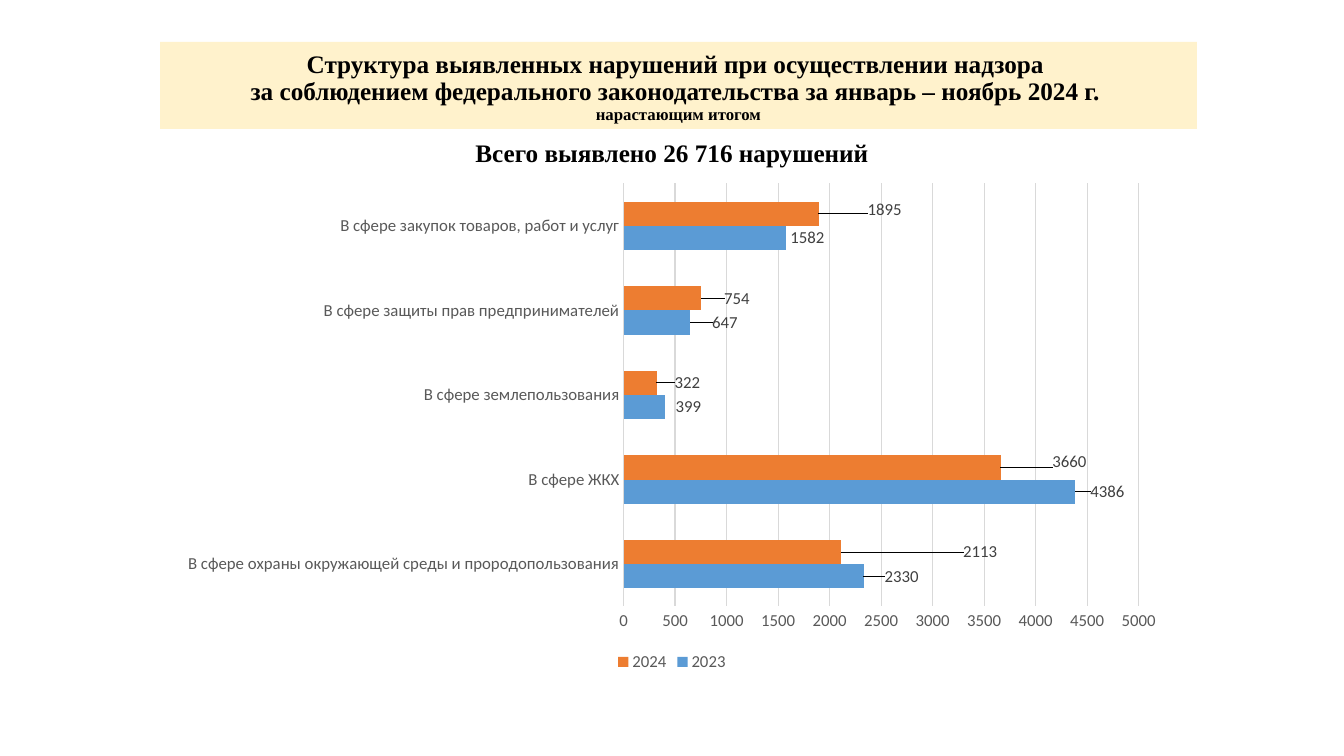
from copy import deepcopy

from lxml.etree import SubElement
from pptx import Presentation
from pptx.chart.data import CategoryChartData
from pptx.dml.color import RGBColor
from pptx.enum.chart import (XL_CHART_TYPE, XL_LABEL_POSITION, XL_LEGEND_POSITION,
                             XL_TICK_MARK)
from pptx.enum.text import MSO_ANCHOR, PP_ALIGN
from pptx.oxml.ns import qn
from pptx.util import Emu, Pt

HEADING = {"name": "Times New Roman", "bold": True}
TITLE = [("Структура выявленных нарушений при осуществлении надзора ", 18),
         ("за соблюдением федерального законодательства за январь – ноябрь 2024 г. ", 18),
         ("нарастающим итогом", 12)]
CATEGORIES = ["В сфере охраны окружающей среды и прородопользования", "В сфере ЖКХ",
              "В сфере землепользования", "В сфере защиты прав предпринимателей",
              "В сфере закупок товаров, работ и услуг"]
SERIES = [("2023", "5B9BD5", [2330, 4386, 399, 647, 1582],
           [(17, 0), (11, 0), (7, 0), (18, 0), (0, 0)]),
          ("2024", "ED7D31", [2113, 3660, 322, 754, 1895],
           [(118, 0), (48, -6), (14, 0), (19, 0), (45, -4)])]


def px(n):
    """Turn whole px into EMU."""
    return Emu(round(n * 12192000 / 1344))


def rgb(value):
    """Turn a hex string into a colour."""
    return RGBColor.from_string(value)


def set_font(font, color, **values):
    """Apply a colour and a dict of values to a font."""
    for key, value in values.items():
        setattr(font, key, value)
    font.color.rgb = rgb(color)


def place(sp, box):
    """Move a placeholder to a px box."""
    for key, value in zip(("left", "top", "width", "height"), box):
        setattr(sp, key, px(value))


def write_heading(sp, box, lines, spacing, anchor):
    """Fill a placeholder with one centred paragraph of broken lines."""
    place(sp, box)
    tf = sp.text_frame
    tf.word_wrap = True
    tf.vertical_anchor = anchor
    p = tf.paragraphs[0]
    for key, value in {"alignment": PP_ALIGN.CENTER, "line_spacing": spacing,
                       "space_before": Pt(0)}.items():
        setattr(p, key, value)
    for i, (text, size) in enumerate(lines):
        if i:
            p.add_line_break()
            p._p.findall(qn("a:br"))[-1].append(deepcopy(r.font._element))
        r = p.add_run()
        r.text = text
        set_font(r.font, "000000", size=Pt(size), **HEADING)


def add_layout(parent, index, values):
    """Insert a manual chart layout into an element."""
    layout = parent.makeelement(qn("c:layout"))
    manual = SubElement(layout, qn("c:manualLayout"))
    for key, value in values.items():
        SubElement(manual, qn("c:" + key)).set("val", str(value))
    for old in parent.findall(qn("c:layout")):
        parent.remove(old)
    parent.insert(index, layout)


def format_series(ser, color, shifts, box):
    """Colour a series and shift its value labels."""
    ser.format.fill.solid()
    ser.format.fill.fore_color.rgb = rgb(color)
    for i, (dx, dy) in enumerate(shifts):
        label = ser.points[i].data_label
        set_font(label.font, "404040", size=Pt(12), name="Calibri")
        label.position = XL_LABEL_POSITION.OUTSIDE_END
    for element, (dx, dy) in zip(ser._element.iter(qn("c:dLbl")), shifts):
        add_layout(element, 1, {"x": round(dx / box[2], 4), "y": round(dy / box[3], 4)})


def add_violations_chart(s, box):
    """Place the bar chart of violations in a px box."""
    data = CategoryChartData()
    data.categories = CATEGORIES
    for name, color, values, shifts in SERIES:
        data.add_series(name, values)
    chart = s.shapes.add_chart(XL_CHART_TYPE.BAR_CLUSTERED, *map(px, box), data).chart
    set_font(chart.font, "595959", size=Pt(12), name="Calibri")
    chart.has_title = False
    chart.has_legend = True
    chart.legend.position = XL_LEGEND_POSITION.BOTTOM
    chart.legend.include_in_layout = False
    set_font(chart.legend.font, "595959", size=Pt(12), name="Calibri")
    for axis in (chart.category_axis, chart.value_axis):
        axis.major_tick_mark = axis.minor_tick_mark = XL_TICK_MARK.NONE
        axis.format.line.fill.background()
        set_font(axis.tick_labels.font, "595959", size=Pt(12), name="Calibri")
    axis = chart.value_axis
    for key, value in {"minimum_scale": 0, "maximum_scale": 5000, "major_unit": 500,
                       "has_major_gridlines": True}.items():
        setattr(axis, key, value)
    grid = axis.major_gridlines.format.line
    grid.color.rgb = rgb("D9D9D9")
    grid.width = Pt(0.75)
    plot = chart.plots[0]
    for key, value in {"gap_width": 150, "overlap": 0, "vary_by_categories": False}.items():
        setattr(plot, key, value)
    for ser, (name, color, values, shifts) in zip(plot.series, SERIES):
        format_series(ser, color, shifts, box)
    area = chart._chartSpace.find(".//" + qn("c:plotArea"))
    add_layout(area, 0, {"layoutTarget": "inner", "xMode": "edge", "yMode": "edge",
                         "x": 0.452, "y": 0.021, "w": 0.511, "h": 0.841})


def main():
    """Build and save the slide."""
    prs = Presentation()
    prs.slide_width, prs.slide_height = px(1344), px(756)
    s = prs.slides.add_slide(prs.slide_layouts[0])
    title, subtitle = s.placeholders
    write_heading(title, (160, 42, 1037, 87), TITLE, 0.9, MSO_ANCHOR.BOTTOM)
    title.fill.solid()
    title.fill.fore_color.rgb = rgb("FFF2CC")
    write_heading(subtitle, (168, 138, 1008, 36),
                  [("Всего выявлено 26 716 нарушений", 18)], 0.8, MSO_ANCHOR.TOP)
    add_violations_chart(s, (168, 173, 1008, 503))
    prs.save("out.pptx")


if __name__ == "__main__":
    main()
